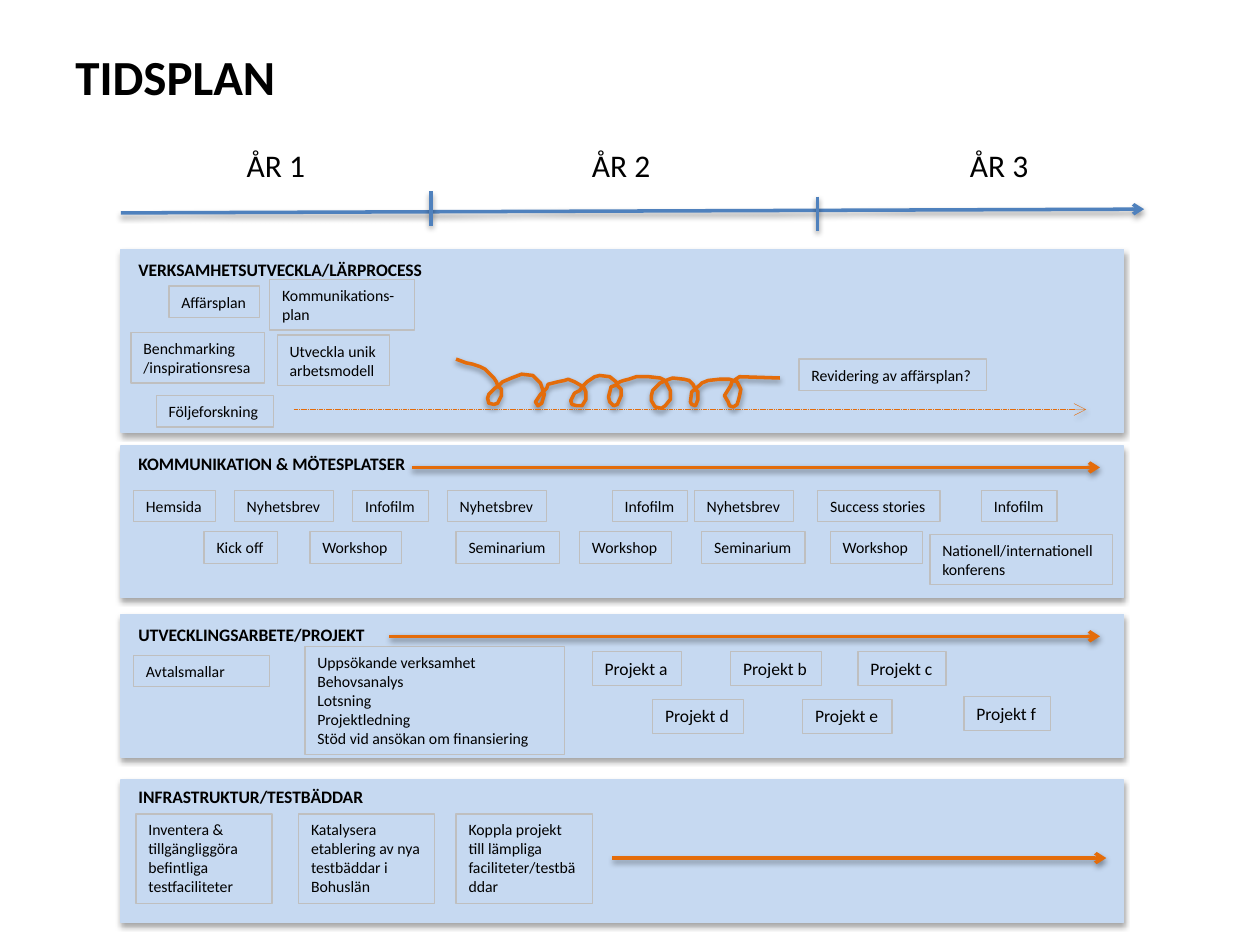
from typing import NamedTuple

from lxml import etree
from pptx import Presentation
from pptx import util as u
from pptx.dml.color import RGBColor
from pptx.enum import dml, shapes, text
from pptx.oxml import ns

COLS, ROWS = 1000, 750  # the slide's grid; all places below count its cells
CELL = u.Inches(10) // COLS
FONT = "Calibri"
HEX = {"ink": "000000", "band": "C6D9F1", "edge": "BFBFBF",
       "axis": "4F81BD", "flow": "E46C0A"}


class Band(NamedTuple):
    top: int
    high: int
    head: str
    drop: int  # from the band's top to the heading
    wide: int  # width of the heading


class Tag(NamedTuple):
    x: int
    y: int
    wide: int
    words: str
    rows: int = 0  # rows after wrapping; 0 means no wrapping
    size: int = 9


class Line(NamedTuple):
    x1: int
    y1: int
    x2: int
    y2: int
    hue: str = "flow"
    tip: bool = True
    width: float = 2
    dash: bool = False


BANDS = [
    Band(198, 145, "VERKSAMHETSUTVECKLA/LÄRPROCESS", 3, 249),
    Band(354, 120, "KOMMUNIKATION & MÖTESPLATSER", 1, 238),
    Band(488, 113, "UTVECKLINGSARBETE/PROJEKT", 2, 203),
    Band(619, 113, "INFRASTRUKTUR/TESTBÄDDAR", 0, 202),
]
YEARS = [(186, "ÅR 1"), (460, "ÅR 2"), (760, "ÅR 3")]
LINES = [
    Line(96, 169, 908, 166, "axis"),
    Line(342, 152, 342, 179, "axis", tip=False),
    Line(649, 156, 649, 183, "axis", tip=False),
    Line(233, 325, 862, 325, width=0.25, dash=True),
    Line(327, 371, 873, 371),
    Line(309, 505, 873, 505),
    Line(486, 681, 878, 681),
]
TAGS = [
    Tag(134, 227, 72, "Affärsplan"),
    Tag(214, 222, 115, "Kommunikations-plan", 2),
    Tag(104, 264, 106, "Benchmarking\n/inspirationsresa"),
    Tag(220, 266, 89, "Utveckla unik\narbetsmodell"),
    Tag(124, 314, 93, "Följeforskning"),
    Tag(634, 285, 149, "Revidering av affärsplan?"),
    Tag(738, 424, 145, "Nationell/internationell\nkonferens", 2),
    Tag(106, 520, 108, "Avtalsmallar", 1),
    Tag(242, 513, 206, "Uppsökande verksamhet\nBehovsanalys\nLotsning\n"
        "Projektledning\nStöd vid ansökan om finansiering", 5),
]
MEDIA = [(106, 65, "Hemsida"), (186, 79, "Nyhetsbrev"), (280, 60, "Infofilm"),
         (355, 79, "Nyhetsbrev"), (486, 60, "Infofilm"),
         (551, 79, "Nyhetsbrev"), (649, 97, "Success stories"),
         (779, 60, "Infofilm")]
MEETS = [(162, 58, "Kick off"), (246, 73, "Workshop"), (362, 82, "Seminarium"),
         (460, 73, "Workshop"), (557, 82, "Seminarium"),
         (659, 73, "Workshop")]
TAGS += [Tag(x, 389, w, words) for x, w, words in MEDIA]
TAGS += [Tag(x, 422, w, words) for x, w, words in MEETS]
JOBS = [(470, 517, 71, "a"), (580, 517, 72, "b"), (681, 517, 70, "c"),
        (518, 555, 72, "d"), (637, 555, 71, "e"), (765, 553, 69, "f")]
TAGS += [Tag(x, y, w, f"Projekt {key}", size=10) for x, y, w, key in JOBS]
TESTS = [(108, "Inventera & tillgängliggöra befintliga testfaciliteter"),
         (237, "Katalysera etablering av nya testbäddar i Bohuslän"),
         (362, "Koppla projekt till lämpliga faciliteter/testbäddar")]
TAGS += [Tag(x, 646, 108, words, 4) for x, words in TESTS]

COIL = [
    (362, 285), (370, 288), (375, 289), (381, 291), (385, 293), (392, 300),
    (394, 303), (395, 306), (398, 309), (398, 314), (395, 320), (392, 321),
    (388, 320), (387, 316), (388, 313), (393, 308), (396, 306), (399, 303),
    (406, 300), (414, 297), (423, 298), (425, 300), (429, 304), (432, 313),
    (430, 320), (427, 322), (425, 319), (429, 313), (432, 310), (434, 308),
    (435, 305), (439, 304), (443, 303), (448, 302), (451, 301), (456, 303),
    (463, 307), (465, 311), (465, 317), (462, 322), (458, 322), (454, 321),
    (453, 318), (455, 314), (456, 312), (460, 310), (463, 306), (466, 303),
    (472, 299), (476, 298), (484, 299), (489, 303), (490, 306), (493, 309),
    (493, 314), (490, 321), (487, 322), (484, 319), (483, 315), (485, 307),
    (488, 306), (492, 303), (495, 302), (499, 301), (505, 299), (515, 299),
    (524, 300), (528, 302), (530, 306), (532, 310), (532, 317), (528, 322),
    (525, 324), (520, 323), (517, 318), (517, 314), (518, 310), (524, 304),
    (531, 301), (534, 300), (543, 301), (547, 302), (550, 305), (552, 309),
    (554, 311), (554, 317), (552, 322), (549, 321), (548, 319), (549, 311),
    (555, 306), (557, 304), (562, 302), (571, 301), (579, 301), (585, 303),
    (588, 309), (587, 314), (586, 318), (585, 321), (582, 323), (579, 322),
    (578, 319), (575, 314), (580, 306), (581, 303), (587, 299), (619, 300),
]


def color(name: str) -> RGBColor:
    return RGBColor.from_string(HEX[name])


def node(root, tag: str, **attrs):
    return etree.SubElement(root, ns.qn(tag), attrs)


def shade(item, alpha: int = 38, dist: float = 1.6) -> None:
    """Give a shape or connector a soft shadow straight below it."""
    glow = node(node(item._element.spPr, "a:effectLst"), "a:outerShdw",
                blurRad=str(u.Pt(3.1)), dist=str(u.Pt(dist)),
                dir="5400000", rotWithShape="0")
    tint = node(glow, "a:srgbClr", val=HEX["ink"])
    node(tint, "a:alpha", val=str(alpha * 1000))


def stroke(item, hue: str, width: float) -> None:
    item.line.color.rgb = color(hue)
    item.line.width = u.Pt(width)


def write(page, words: str, x: int, y: int, wide: int, high: int, *,
          size: int = 9, bold: bool = False, wrap: bool = False,
          middle: bool = False):
    box = page.shapes.add_textbox(x * CELL, y * CELL, wide * CELL, high * CELL)
    frame = box.text_frame
    frame.word_wrap = wrap
    if middle:
        frame.vertical_anchor = text.MSO_ANCHOR.MIDDLE
    else:
        frame.auto_size = text.MSO_AUTO_SIZE.SHAPE_TO_FIT_TEXT
    frame.text = words
    for para in frame.paragraphs:
        font = para.runs[0].font
        font.name, font.size, font.bold = FONT, u.Pt(size), bold
        font.color.rgb = color("ink")
    return box


def draw_band(page, band: Band) -> None:
    rect = page.shapes.add_shape(shapes.MSO_SHAPE.RECTANGLE, 96 * CELL,
                                 band.top * CELL, 796 * CELL, band.high * CELL)
    rect.fill.solid()
    rect.fill.fore_color.rgb = color("band")
    stroke(rect, "band", 0.75)
    shade(rect, 35, 1.8)
    write(page, band.head, 100, band.top + band.drop, band.wide, 27,
          size=10, bold=True)


def draw_tag(page, tag: Tag) -> None:
    rows = tag.rows or tag.words.count("\n") + 1
    high = round(10 + rows * tag.size * 1.69)
    box = write(page, tag.words, tag.x, tag.y, tag.wide, high,
                size=tag.size, wrap=tag.rows > 0)
    stroke(box, "edge", 0.75)


def draw_line(page, line: Line) -> None:
    link = page.shapes.add_connector(
        shapes.MSO_CONNECTOR.STRAIGHT, line.x1 * CELL, line.y1 * CELL,
        line.x2 * CELL, line.y2 * CELL)
    stroke(link, line.hue, line.width)
    if line.dash:
        link.line.dash_style = dml.MSO_LINE.SQUARE_DOT
    if line.tip:
        node(link.line._get_or_add_ln(), "a:tailEnd", type="arrow")
    shade(link)


def draw_coil(page) -> None:
    pen = page.shapes.build_freeform(*COIL[0], scale=CELL)
    pen.add_line_segments(COIL[1:], close=False)
    coil = pen.convert_to_shape()
    coil.fill.background()
    stroke(coil, "flow", 2)
    shade(coil)


def main() -> None:
    deck = Presentation()
    deck.slide_width, deck.slide_height = COLS * CELL, ROWS * CELL
    page = deck.slides.add_slide(deck.slide_layouts[6])
    write(page, "TIDSPLAN", 50, -2, 900, 125, size=28, bold=True,
          wrap=True, middle=True)
    for x, year in YEARS:
        write(page, year, x, 111, 67, 40, size=18)
    for band in BANDS:
        draw_band(page, band)
    for tag in TAGS:
        draw_tag(page, tag)
    draw_coil(page)
    for line in LINES:
        draw_line(page, line)
    deck.save("out.pptx")


if __name__ == "__main__":
    main()
